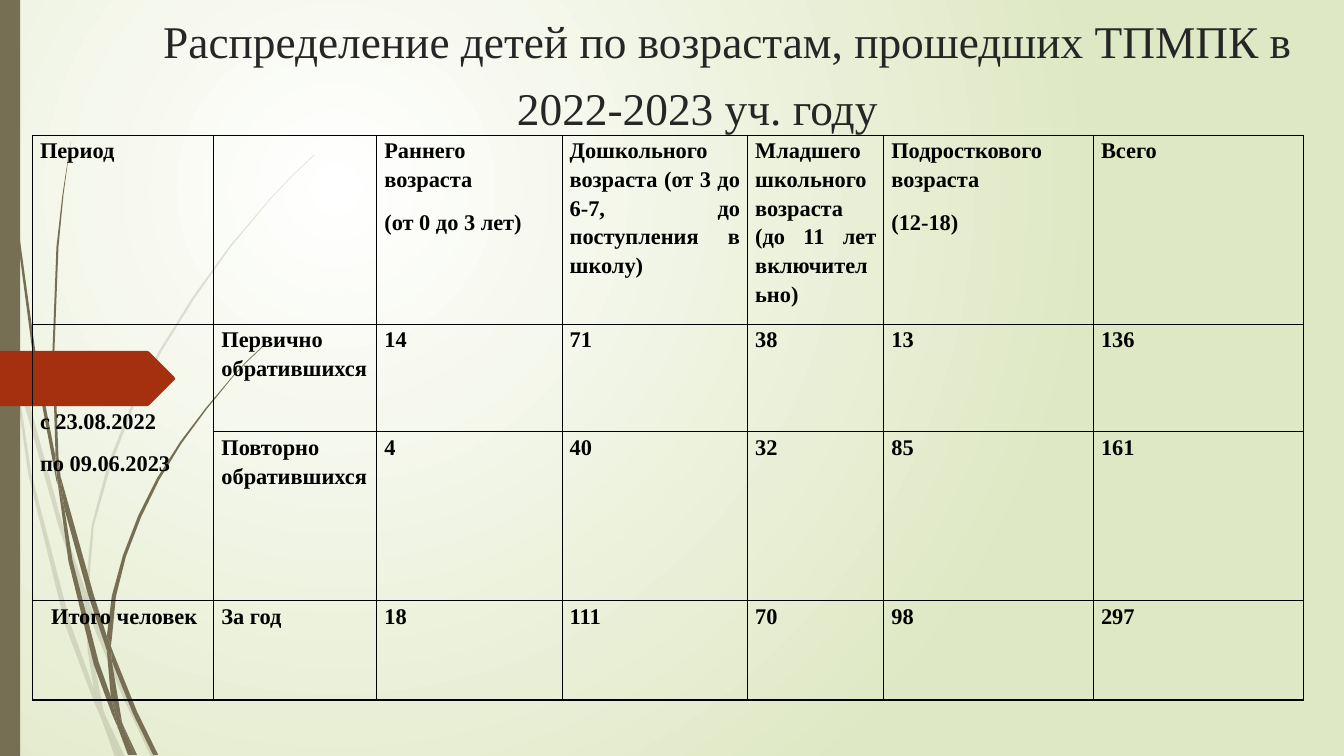
from lxml import etree
from pptx import Presentation
from pptx.dml.color import RGBColor
from pptx.enum.shapes import MSO_SHAPE
from pptx.enum.text import MSO_ANCHOR, PP_ALIGN
from pptx.oxml.ns import qn
from pptx.util import Pt

RECTANGLE = MSO_SHAPE.RECTANGLE
TOP = MSO_ANCHOR.TOP
CENTER, JUSTIFY = PP_ALIGN.CENTER, PP_ALIGN.JUSTIFY

COLORS = {"white": "FFFFFF", "green": "DFE8C4", "olive": "766F54",
          "red": "A53010", "title": "262626", "black": "000000"}
FONT = "Times New Roman"
UNIT = Pt(0.72)

PALE_GRASS = [
    [(11, 350), (9, 322), (0, 282), (0, 299), (10, 344)],
    [(58, 522), (84, 599), (85, 586), (62, 520), (14, 345), (17, 376)],
    [(92, 607), (88, 596), (88, 610), (123, 694), (150, 751), (155, 751), (127, 692)],
    [(119, 751), (124, 751), (105, 711)],
    [(93, 683), (70, 619), (31, 469), (17, 376), (11, 350), (28, 470), (65, 621),
     (92, 693), (101, 714), (99, 707)],
    [(84, 599), (87, 646), (93, 683), (96, 692), (105, 711), (103, 706), (91, 646),
     (88, 610), (88, 608)],
    [(88, 584), (93, 522), (110, 462), (132, 405), (160, 349), (193, 296), (229, 245),
     (268, 198), (290, 175), (312, 154), (312, 153), (289, 175), (268, 197), (228, 244),
     (191, 295), (158, 348), (130, 403), (107, 461), (91, 521), (85, 584), (85, 586),
     (88, 596)],
    [(101, 714), (114, 751), (119, 751)],
    [(88, 608), (88, 610), (88, 596), (85, 586), (84, 599)],
    [(96, 692), (93, 683), (99, 707), (101, 714), (119, 751), (105, 711)],
]
DARK_GRASS = [
    [(7, 110), (17, 233), (33, 355), (56, 477), (57, 481), (55, 457), (55, 453),
     (36, 355), (19, 232), (8, 109), (5, 48), (4, 0), (3, 0), (4, 48)],
    [(88, 592), (106, 645), (106, 633), (106, 631), (93, 590), (60, 472), (64, 505)],
    [(113, 649), (110, 641), (111, 656), (132, 708), (152, 749), (157, 749), (136, 706)],
    [(110, 691), (98, 657), (72, 556), (64, 505), (57, 477), (68, 557), (93, 659),
     (111, 708), (117, 722), (116, 717)],
    [(60, 472), (58, 453), (54, 349), (58, 245), (63, 193), (70, 141), (62, 193),
     (56, 245), (52, 349), (55, 449)],
    [(133, 749), (136, 749), (122, 719)],
    [(57, 477), (64, 505), (60, 472), (55, 449), (55, 453)],
    [(111, 633), (115, 592), (125, 552), (140, 513), (158, 476), (180, 440), (205, 406),
     (231, 374), (245, 359), (261, 344), (260, 344), (245, 358), (231, 373), (204, 405),
     (179, 438), (156, 474), (137, 512), (122, 551), (111, 591), (106, 631), (110, 641)],
    [(117, 722), (127, 749), (131, 749)],
    [(106, 645), (110, 691), (116, 706), (122, 719), (121, 716), (111, 656), (109, 651)],
    [(106, 645), (109, 651), (111, 656), (110, 641), (106, 631), (106, 633)],
    [(116, 706), (110, 691), (116, 717), (117, 722), (130, 749), (133, 749), (122, 719)],
]
ARROW = [(0, 348), (146, 348), (148, 349), (173, 374), (174, 375.5), (173, 377),
         (148, 402), (146, 403), (0, 403)]

COLUMN_WIDTHS = [129.6, 116.4, 132.4, 132.5, 97.3, 149.8, 149.8]
ROW_HEIGHTS = [135, 76.8, 120.4, 71.2]
CELLS = [
    ["Период", "", "Раннего возраста\n(от 0 до 3 лет)",
     "Дошкольного возраста (от 3 до 6-7, до поступления в школу)",
     "Младшего школьного возраста (до 11 лет включительно)",
     "Подросткового возраста\n(12-18)", "Всего"],
    ["с 23.08.2022\nпо 09.06.2023", "Первично обратившихся", "14", "71", "38", "13", "136"],
    ["", "Повторно обратившихся", "4", "40", "32", "85", "161"],
    ["Итого человек", "За год", "18", "111", "70", "98", "297"],
]


def color(name):
    """Return the named colour."""
    return RGBColor.from_string(COLORS[name])


def paint(shape, name, alpha=None):
    """Give a shape a plain fill, optionally translucent, and no outline."""
    shape.shadow.inherit = False
    shape.fill.solid()
    shape.fill.fore_color.rgb = color(name)
    shape.line.fill.background()
    if alpha:
        fill_color = shape._element.spPr.find(".//" + qn("a:srgbClr"))
        etree.SubElement(fill_color, qn("a:alpha")).set("val", str(alpha * 1000))


def draw_outline(shapes, points, name, alpha=None):
    """Draw a closed outline given in hundredths of an inch."""
    builder = shapes.build_freeform(*points[0], scale=UNIT)
    builder.add_line_segments(points[1:], close=True)
    paint(builder.convert_to_shape(), name, alpha)


def format_text(paragraph, size, name, spacing, alignment, bold=False):
    """Format a paragraph and its runs."""
    paragraph.alignment = alignment
    paragraph.line_spacing = spacing
    for run in paragraph.runs:
        run.font.name = FONT
        run.font.size = Pt(size)
        run.font.bold = bold
        run.font.color.rgb = color(name)


def add_background(slide):
    """Fill the slide with a circular gradient."""
    fill = slide.background.fill
    fill.gradient()
    for stop, name in zip(fill.gradient_stops, ("white", "green")):
        stop.color.rgb = color(name)
    gradient = slide._element.find(".//" + qn("a:gradFill"))
    linear = gradient.find(qn("a:lin"))
    circle = etree.Element(qn("a:path"), {"path": "circle"})
    etree.SubElement(circle, qn("a:fillToRect"),
                     {"l": "50000", "t": "50000", "r": "100000", "b": "100000"})
    gradient.replace(linear, circle)


def add_decoration(slide, width, height):
    """Draw the grass, the side band and the red arrow."""
    for grass, alpha in ((PALE_GRASS, 20), (DARK_GRASS, None)):
        group = slide.shapes.add_group_shape()
        for points in grass:
            draw_outline(group.shapes, points, "olive", alpha)
    band = slide.shapes.add_shape(RECTANGLE, 0, 0, Pt(width), Pt(height))
    paint(band, "olive")
    draw_outline(slide.shapes, ARROW, "red")


def add_title(slide, left, top, width, height):
    """Write the heading."""
    box = slide.shapes.add_textbox(Pt(left), Pt(top), Pt(width), Pt(height))
    frame = box.text_frame
    frame.word_wrap = True
    frame.vertical_anchor = TOP
    frame.margin_top = frame.margin_bottom = 0
    frame.text = " Распределение детей по возрастам, прошедших ТПМПК в 2022-2023 уч. году"
    paragraph = frame.paragraphs[0]
    format_text(paragraph, 32.4, "title", 1.24, CENTER)
    properties = paragraph._p.get_or_add_pPr()
    properties.set("marL", str(Pt(36)))
    properties.set("indent", str(Pt(35.3)))


def style_cell(cell):
    """Give a cell black borders, no fill and narrow margins."""
    properties = cell._tc.get_or_add_tcPr()
    for side in ("a:lnL", "a:lnR", "a:lnT", "a:lnB"):
        line = etree.SubElement(properties, qn(side), {"w": str(Pt(1))})
        fill = etree.SubElement(line, qn("a:solidFill"))
        etree.SubElement(fill, qn("a:srgbClr"), {"val": COLORS["black"]})
    cell.fill.background()
    cell.margin_left = cell.margin_right = Pt(5.4)
    cell.margin_top = cell.margin_bottom = 0


def add_age_table(slide, left, top):
    """Build the table of children by age."""
    frame = slide.shapes.add_table(len(ROW_HEIGHTS), len(COLUMN_WIDTHS), Pt(left), Pt(top),
                                   Pt(sum(COLUMN_WIDTHS)), Pt(sum(ROW_HEIGHTS)))
    table = frame.table
    table.first_row = table.horz_banding = False
    for column, width in zip(table.columns, COLUMN_WIDTHS):
        column.width = Pt(width)
    for row, height, texts in zip(table.rows, ROW_HEIGHTS, CELLS):
        row.height = Pt(height)
        for cell, text in zip(row.cells, texts):
            style_cell(cell)
            cell.text_frame.text = text
            for paragraph in cell.text_frame.paragraphs:
                format_text(paragraph, 16, "black", 1.15, JUSTIFY, bold=True)
                paragraph.space_after = Pt(10)
    period = table.cell(1, 0)
    period.merge(table.cell(2, 0))
    period.margin_top = Pt(58)
    table.cell(3, 0).margin_left = Pt(13.4)


def main():
    """Build and save the presentation."""
    presentation = Presentation()
    presentation.slide_width, presentation.slide_height = Pt(960), Pt(540)
    slide = presentation.slides.add_slide(presentation.slide_layouts[6])
    add_background(slide)
    add_decoration(slide, 14.4, 540)
    add_title(slide, 0, 0, 960, 94)
    add_age_table(slide, 23.2, 96.6)
    presentation.save("out.pptx")


if __name__ == "__main__":
    main()
